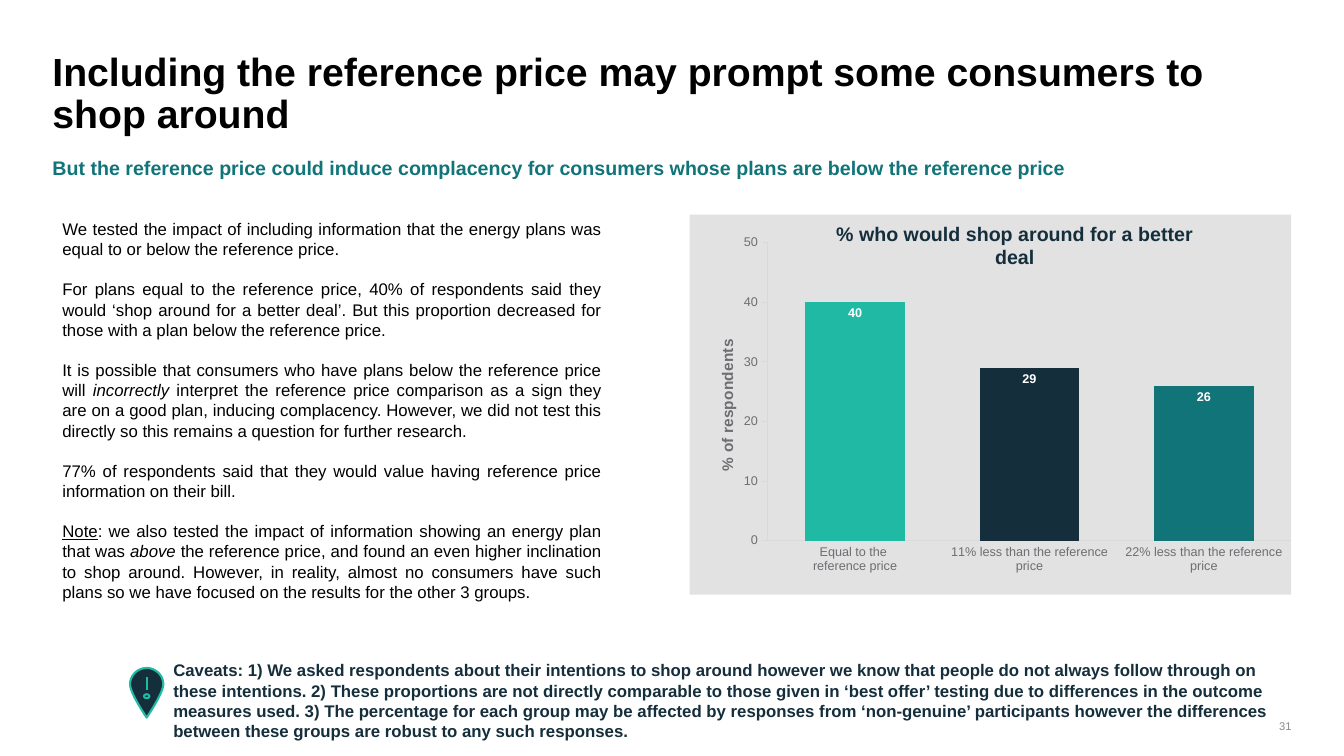
from dataclasses import dataclass

from lxml.etree import SubElement
from pptx import Presentation
from pptx.chart.data import CategoryChartData
from pptx.dml.color import RGBColor
from pptx.enum.chart import XL_CHART_TYPE, XL_LABEL_POSITION, XL_TICK_MARK
from pptx.enum.shapes import MSO_CONNECTOR, MSO_SHAPE
from pptx.enum.text import MSO_ANCHOR, PP_ALIGN
from pptx.oxml import parse_xml
from pptx.oxml.ns import nsdecls, qn
from pptx.util import Inches, Pt


@dataclass(frozen=True)
class Theme:
    font: str = "Arial"
    black: str = "000000"
    navy: str = "142E3B"
    teal: str = "117479"
    mint: str = "20B9A3"
    white: str = "FFFFFF"
    panel: str = "E2E2E3"
    axis_text: str = "6D6E71"
    axis_line: str = "D9D9D9"
    page_grey: str = "8C8C8C"
    title: int = 28
    heading: int = 14
    body: int = 12
    axis_title: int = 11
    label: int = 9
    page: int = 8


THEME = Theme()
WIDTH, HEIGHT = 13.33, 7.5
LEFT, RIGHT = 0.52, 12.81
CONTENT = RIGHT - LEFT
PADDING = (0.1, 0.05)

FINDINGS = [
    [("We tested the impact of including information that the energy plans was equal to or below the reference price.", "")],
    [("For plans equal to the reference price, 40% of respondents said they would ‘shop around for a better deal’. "
      "But this proportion decreased for those with a plan below the reference price.", "")],
    [("It is possible that consumers who have plans below the reference price will ", ""), ("incorrectly ", "italic"),
     ("interpret the reference price comparison as a sign they are on a good plan, inducing complacency. "
      "However, we did not test this directly so this remains a question for further research.", "")],
    [("77% of respondents said that they would value having reference price information on their bill.", "")],
    [("Note", "underline"),
     (": we also tested the impact of information showing an energy plan that was ", ""), ("above", "italic"),
     (" the reference price, and found an even higher inclination to shop around. However, in reality, almost no "
      "consumers have such plans so we have focused on the results for the other 3 groups.", "")],
]
CAVEATS = (
    "Caveats: 1) We asked respondents about their intentions to shop around however we know that people do not "
    "always follow through on these intentions. 2) These proportions are not directly comparable to those given in "
    "‘best offer’ testing due to differences in the outcome measures used. 3) The percentage for each group may be "
    "affected by responses from ‘non-genuine’ participants however the differences between these groups are robust "
    "to any such responses."
)
SHOP_AROUND = {
    "Equal to the \nreference price": (40, THEME.mint),
    "11% less than the reference price": (29, THEME.navy),
    "22% less than the reference price": (26, THEME.teal),
}


def color(value):
    return RGBColor.from_string(value)


def style_font(font, size, value, bold=False):
    font.name, font.size, font.bold = THEME.font, Pt(size), bold
    font.color.rgb = color(value)


def place(shape, box):
    shape.left, shape.top, shape.width, shape.height = map(Inches, box)


def write(shape, paragraphs, size, value, bold=False, align=PP_ALIGN.LEFT,
          padding=(0, 0), anchor=MSO_ANCHOR.TOP, gap=0, wrap=True):
    frame = shape.text_frame
    frame.word_wrap, frame.vertical_anchor = wrap, anchor
    frame.margin_left = frame.margin_right = Inches(padding[0])
    frame.margin_top = frame.margin_bottom = Inches(padding[1])
    for index, runs in enumerate(paragraphs):
        paragraph = frame.add_paragraph() if index else frame.paragraphs[0]
        paragraph.alignment = align
        paragraph.space_before = Pt(gap if index else 0)
        for text, emphasis in runs:
            run = paragraph.add_run()
            run.text = text
            style_font(run.font, size, value, bold)
            run.font.italic = emphasis == "italic"
            run.font.underline = emphasis == "underline"


def add_text(slide, box, paragraphs, size, value, **options):
    shape = slide.shapes.add_textbox(*map(Inches, box))
    write(shape, paragraphs, size, value, **options)


def add_header(slide, box):
    left, top, width, height = box
    title = slide.shapes.title
    place(title, (left, top, width, height * 0.67))
    write(title, [[("Including the reference price may prompt some consumers to shop around", "")]],
          THEME.title, THEME.black, bold=True)
    title.text_frame.paragraphs[0].line_spacing = 0.9
    add_text(slide, (left, top + height * 0.81, width, height * 0.19),
             [[("But the reference price could induce complacency for consumers whose plans are below the reference price", "")]],
             THEME.heading, THEME.teal, bold=True)


def style_axis(axis, tick):
    axis.has_major_gridlines = False
    axis.major_tick_mark, axis.minor_tick_mark = tick, XL_TICK_MARK.NONE
    axis.format.line.color.rgb = color(THEME.axis_line)
    axis.format.line.width = Pt(0.75)
    style_font(axis.tick_labels.font, THEME.label, THEME.axis_text)


def add_layout(parent, position, **values):
    layout = parent.makeelement(qn("c:layout"))
    parent.insert(position, layout)
    manual = SubElement(layout, qn("c:manualLayout"))
    for name, value in values.items():
        SubElement(manual, qn(f"c:{name}")).set("val", str(value))


def add_shop_around_chart(slide, box):
    left, top, width, height = box
    data = CategoryChartData()
    data.categories = list(SHOP_AROUND)
    data.add_series("Series 1", [value for value, fill in SHOP_AROUND.values()])
    chart = slide.shapes.add_chart(XL_CHART_TYPE.COLUMN_CLUSTERED, *map(Inches, box), data).chart
    chart.has_title = chart.has_legend = False
    style_font(chart.font, 10, THEME.black)
    chart_space = chart.element
    chart_space.find(qn("c:chart")).addnext(parse_xml(
        f'<c:spPr {nsdecls("c", "a")}><a:solidFill><a:srgbClr val="{THEME.panel}"/></a:solidFill>'
        '<a:ln><a:noFill/></a:ln></c:spPr>'))
    plot_area = chart_space.find(".//" + qn("c:plotArea"))
    for layout in plot_area.findall(qn("c:layout")):
        plot_area.remove(layout)
    add_layout(plot_area, 0, layoutTarget="inner", xMode="edge", yMode="edge",
               x=0.13, y=0.074, w=0.87, h=0.784)

    style_axis(chart.category_axis, XL_TICK_MARK.NONE)
    values = chart.value_axis
    style_axis(values, XL_TICK_MARK.OUTSIDE)
    values.minimum_scale, values.maximum_scale, values.major_unit = 0, 50, 10
    run = values.axis_title.text_frame.paragraphs[0].add_run()
    run.text = "% of respondents"
    style_font(run.font, THEME.axis_title, THEME.axis_text, bold=True)
    title = chart_space.find(".//" + qn("c:valAx")).find(qn("c:title"))
    for layout in title.findall(qn("c:layout")):
        title.remove(layout)
    add_layout(title, 1, xMode="edge", yMode="edge", x=0.04, y=0.32)

    plot = chart.plots[0]
    plot.gap_width, plot.vary_by_categories = 75, False
    series = plot.series[0]
    for index, (value, fill) in enumerate(SHOP_AROUND.values()):
        point = series.points[index].format.fill
        point.solid()
        point.fore_color.rgb = color(fill)
    labels = series.data_labels
    labels.show_value, labels.position = True, XL_LABEL_POSITION.INSIDE_END
    style_font(labels.font, THEME.label, THEME.white, bold=True)
    add_text(slide, (left + width * 0.19, top + 0.02, width * 0.7, height * 0.09),
             [[("% who would shop around for a better deal", "")]], THEME.heading, THEME.navy,
             bold=True, align=PP_ALIGN.CENTER, padding=PADDING, wrap=False)


def curve(points, steps=12):
    start, first, second, end = points
    for step in range(1, steps + 1):
        t = step / steps
        yield tuple((1 - t) ** 3 * a + 3 * (1 - t) ** 2 * t * b + 3 * (1 - t) * t ** 2 * c + t ** 3 * d
                    for a, b, c, d in zip(start, first, second, end))


def outline(shape):
    shape.line.color.rgb = color(THEME.mint)
    shape.line.width = Pt(1.5)


def add_warning_pin(slide, box):
    left, top, width, height = box
    right_side = [*curve([(0.5, 0), (0.78, 0), (1, 0.15), (1, 0.33)]),
                  *curve([(1, 0.33), (1, 0.51), (0.5, 1), (0.5, 1)])]
    left_side = [(1 - x, y) for x, y in reversed(right_side[:-1])]
    points = [(Inches(left + x * width), Inches(top + y * height)) for x, y in right_side + left_side]
    builder = slide.shapes.build_freeform(Inches(left + width / 2), Inches(top))
    builder.add_line_segments(points, close=True)
    pin = builder.convert_to_shape()
    middle = left + width / 2
    dot = slide.shapes.add_shape(MSO_SHAPE.OVAL, *map(Inches, (
        middle - width * 0.08, top + height * 0.53, width * 0.16, height * 0.08)))
    for shape in (pin, dot):
        shape.shadow.inherit = False
        shape.fill.solid()
        shape.fill.fore_color.rgb = color(THEME.navy)
        outline(shape)
    stroke = slide.shapes.add_connector(MSO_CONNECTOR.STRAIGHT, *map(Inches, (
        middle, top + height * 0.18, middle, top + height * 0.45)))
    outline(stroke)
    SubElement(stroke.element.spPr, qn("a:effectLst"))


def add_caveats(slide, box):
    left, top, width, height = box
    pin_width = 0.33
    add_warning_pin(slide, (left, top + height * 0.14, pin_width, height * 0.54))
    add_text(slide, (left + pin_width, top, width - pin_width, height), [[(CAVEATS, "")]],
             THEME.body, THEME.navy, bold=True, padding=PADDING)


def build_slide(presentation):
    slide = presentation.slides.add_slide(presentation.slide_layouts[5])
    add_header(slide, (LEFT, 0.52, CONTENT, 1.27))
    add_text(slide, (LEFT, 2.12, 5.55, 3.94), FINDINGS, THEME.body, THEME.black,
             align=PP_ALIGN.JUSTIFY, padding=PADDING, gap=14.4)
    add_shop_around_chart(slide, (6.84, 2.13, RIGHT - 6.84, 3.77))
    add_caveats(slide, (1.29, 6.5, RIGHT - 1.29, 0.91))
    add_text(slide, (RIGHT - 0.45, 7.14, 0.45, 0.13), [[("31", "")]], THEME.page, THEME.page_grey,
             align=PP_ALIGN.RIGHT, anchor=MSO_ANCHOR.BOTTOM)


def main():
    presentation = Presentation()
    presentation.slide_width, presentation.slide_height = Inches(WIDTH), Inches(HEIGHT)
    build_slide(presentation)
    presentation.save("out.pptx")


if __name__ == "__main__":
    main()
